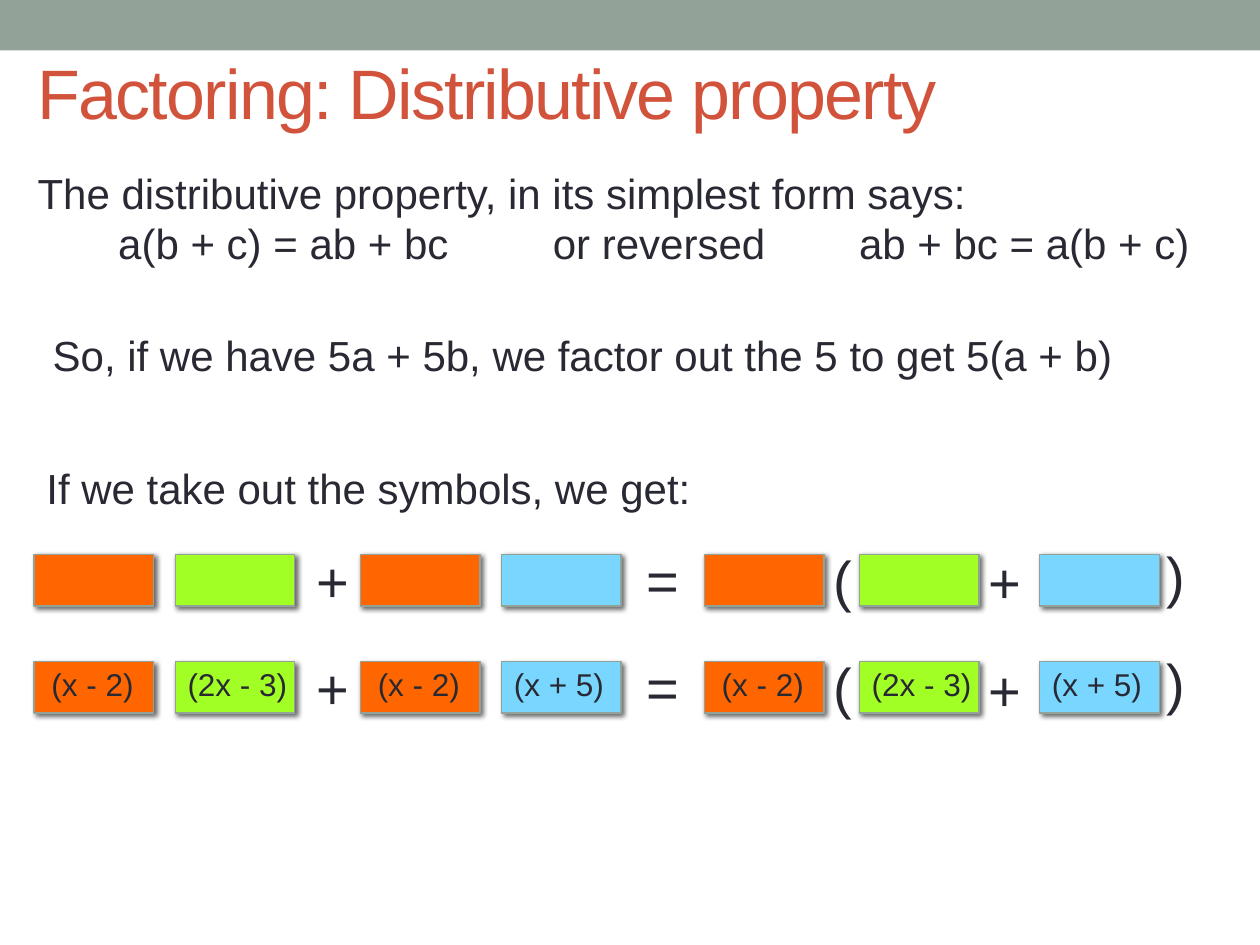
"""Build a slide on factoring with the distributive property."""
from lxml import etree
from pptx import Presentation
from pptx.dml.color import RGBColor
from pptx.enum.shapes import MSO_SHAPE
from pptx.enum.text import MSO_ANCHOR, MSO_AUTO_SIZE
from pptx.oxml.ns import qn
from pptx.util import Inches, Pt

RECT = MSO_SHAPE.RECTANGLE
MIDDLE = MSO_ANCHOR.MIDDLE
GROW = MSO_AUTO_SIZE.SHAPE_TO_FIT_TEXT
SAGE = RGBColor(0x93, 0xA2, 0x99)
RED = RGBColor(0xD2, 0x53, 0x3C)
INK = RGBColor(0x29, 0x29, 0x34)
ORANGE = RGBColor(0xFF, 0x66, 0x00)
LIME = RGBColor(0xA2, 0xFF, 0x26)
SKY = RGBColor(0x78, 0xD6, 0xFF)

TITLE = "Factoring: Distributive property"
RULE = [
    "The distributive property, in its simplest form says:",
    "\ta(b + c) = ab + bc\tor reversed\tab + bc = a(b + c)",
]
STOPS = [0.64, 4.09, 6.52]
SAMPLE = "So, if we have 5a + 5b, we factor out the 5 to get 5(a + b)"
LEAD = "If we take out the symbols, we get:"
TERMS = {
    ORANGE: ("(x - 2)", 0.04, 0.9),
    LIME: ("(2x - 3)", 0, 1.1),
    SKY: ("(x + 5)", 0, 1.1),
}
BOXES = [(0.27, ORANGE), (1.39, LIME), (2.86, ORANGE), (3.98, SKY),
         (5.59, ORANGE), (6.82, LIME), (8.25, SKY)]
SIGNS = [("+", 2.41, -0.11), ("=", 5.03, -0.12), ("(", 6.52, -0.12),
         ("+", 7.75, -0.1), (")", 9.16, -0.15)]
ROWS = [(4.4, False), (5.25, True)]


def write(shapes, lines, left, top, width, height, size, color=INK):
    box = shapes.add_textbox(*map(Inches, (left, top, width, height)))
    frame = box.text_frame
    frame.word_wrap = True
    frame.auto_size = GROW
    for i, line in enumerate(lines):
        para = frame.paragraphs[0] if i == 0 else frame.add_paragraph()
        run = para.add_run()
        run.text = line
        run.font.name = "Arial"
        run.font.size = Pt(size)
        run.font.color.rgb = color
    return frame


def block(shapes, left, top, width, height, fill):
    box = shapes.add_shape(RECT, *map(Inches, (left, top, width, height)))
    box.shadow.inherit = False
    box.fill.solid()
    box.fill.fore_color.rgb = fill
    box.line.fill.background()
    return box


def term(shapes, left, top, fill):
    box = block(shapes, left, top, 0.95, 0.41, fill)
    box.line.color.rgb = SAGE
    box.line.width = Pt(0.75)
    effects = box.element.spPr.find(qn("a:effectLst"))
    shade = etree.SubElement(effects, qn("a:outerShdw"), blurRad=str(Pt(3)),
                             dist=str(Pt(2)), dir=str(45 * 60000),
                             rotWithShape="0")
    black = etree.SubElement(shade, qn("a:srgbClr"), val="000000")
    etree.SubElement(black, qn("a:alpha"), val="60000")


def set_tabs(para, stops):
    tabs = etree.SubElement(para._p.get_or_add_pPr(), qn("a:tabLst"))
    for stop in stops:
        etree.SubElement(tabs, qn("a:tab"), pos=str(Inches(stop)), algn="l")


def main():
    deck = Presentation()
    deck.slide_width, deck.slide_height = Inches(10), Inches(7.5)
    shapes = deck.slides.add_slide(deck.slide_layouts[6]).shapes

    block(shapes, 0, 0, 10, 0.4, SAGE)
    head = write(shapes, [TITLE], 0.2, 0.19, 9, 1.08, 40, RED)
    head.auto_size = MSO_AUTO_SIZE.NONE
    head.vertical_anchor = MIDDLE
    head.paragraphs[0].runs[0].font._rPr.set("spc", "-100")
    rule = write(shapes, RULE, 0.2, 1.28, 9.66, 0.91, 24)
    set_tabs(rule.paragraphs[1], STOPS)
    write(shapes, [SAMPLE], 0.32, 2.57, 9.23, 0.5, 24)

    for top, named in ROWS:
        group = shapes.add_group_shape().shapes
        if not named:
            write(group, [LEAD], 0.27, 3.62, 9.23, 0.5, 24)
        for left, fill in BOXES:
            term(group, left, top, fill)
        for sign, left, shift in SIGNS:
            write(group, [sign], left, top + shift, 0.49, 0.64, 32)
        if named:
            for left, fill in BOXES:
                label, inset, width = TERMS[fill]
                write(group, [label], left + inset, top - 0.02, width, 0.4, 18)

    deck.save("out.pptx")


if __name__ == "__main__":
    main()
